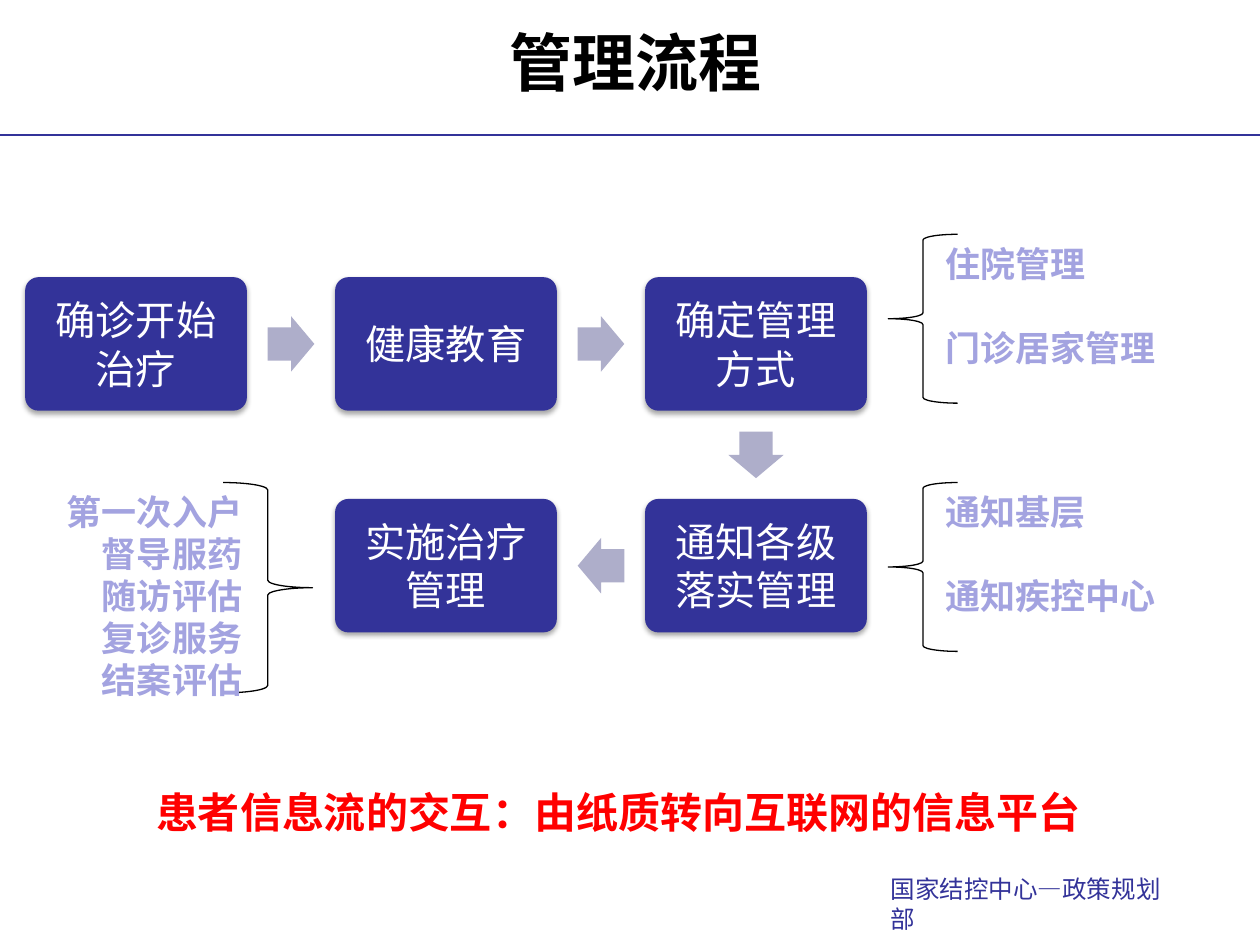
import pptx
import pptx.util
import pptx.dml.color
import pptx.enum.shapes
import pptx.enum.text
import pptx.oxml
import pptx.oxml.ns

Inches, Pt = pptx.util.Inches, pptx.util.Pt
RGB = pptx.dml.color.RGBColor.from_string
Kind = pptx.enum.shapes.MSO_SHAPE
Align = pptx.enum.text.PP_ALIGN
Anchor = pptx.enum.text.MSO_ANCHOR

theme = {
    "navy": "333399", "arrow": "AEAECA", "note": "A3A3E0",
    "black": "000000", "white": "FFFFFF", "red": "FF0000",
    "title": 36, "step": 23, "list": 20, "key": 24, "foot": 14,
    "latin": "Arial", "asian": "Noto Sans CJK SC",
}
NS = pptx.oxml.ns.nsdecls("a")


def write(shape, lines, size, color, align=Align.LEFT, anchor=Anchor.TOP,
          bold=False, wrap=True, gap=0, latin="latin"):
    frame = shape.text_frame
    frame.text = "\n".join(lines)
    frame.word_wrap = wrap
    frame.vertical_anchor = anchor
    for i, para in enumerate(frame.paragraphs):
        para.alignment = align
        para.space_before = Pt(gap if i else 0)
        for run in para.runs:
            run.font.size = Pt(theme[size])
            run.font.bold = bold
            run.font.color.rgb = RGB(theme[color])
            run.font.name = theme[latin]
            run.font._element.append(pptx.oxml.parse_xml(
                f'<a:ea {NS} typeface="{theme["asian"]}"/>'))


def draw(kind, x, y, w, h, fill, line=None):
    shape = slide.shapes.add_shape(kind, Inches(x), Inches(y), Inches(w), Inches(h))
    shape.shadow.inherit = False
    shape.fill.solid()
    shape.fill.fore_color.rgb = RGB(theme[fill])
    if line:
        shape.line.color.rgb = RGB(theme[line])
        shape.line.width = Pt(0.75)
    else:
        shape.line.fill.background()
    return shape


deck = pptx.Presentation()
deck.slide_width, deck.slide_height = Inches(10), Inches(7.5)
slide = deck.slides.add_slide(deck.slide_layouts[5])

# Rule under the title
rule = slide.shapes.add_connector(pptx.enum.shapes.MSO_CONNECTOR.STRAIGHT,
                                  0, Inches(1.07), deck.slide_width, Inches(1.07))
rule.line.color.rgb = RGB(theme["navy"])
rule.line.width = Pt(1)
rule._element.spPr.append(pptx.oxml.parse_xml(f"<a:effectLst {NS}/>"))

# Title
title = slide.shapes.title
title.left, title.top = Inches(0.54), Inches(-0.02)
title.width, title.height = Inches(9), Inches(1.02)
write(title, ["管理流程"], "title", "black", Align.CENTER, Anchor.MIDDLE, True)

# Grid of the flow
left, top = 0.2, 2.2
col, row = 2.46, 1.76
wide, high = 1.76, 1.06

# Steps: column, row, text
steps = [(0, 0, "确诊开始治疗"), (1, 0, "健康教育"), (2, 0, "确定管理方式"),
         (2, 1, "通知各级落实管理"), (1, 1, "实施治疗管理")]
for c, r, text in steps:
    box = draw(Kind.ROUNDED_RECTANGLE, left + c * col, top + r * row, wide, high, "navy")
    box.adjustments[0] = 0.1
    fx = box._element.spPr.find(pptx.oxml.ns.qn("a:effectLst"))
    fx.append(pptx.oxml.parse_xml(
        f'<a:outerShdw {NS} blurRad="{Pt(3.1)}" dist="{Pt(1.8)}" dir="5400000" '
        'rotWithShape="0"><a:srgbClr val="000000"><a:alpha val="35000"/>'
        '</a:srgbClr></a:outerShdw>'))
    frame = box.text_frame
    frame.margin_left = frame.margin_right = Inches(0.1)
    frame.margin_top = frame.margin_bottom = Inches(0.1)
    write(box, [text], "step", "white", Align.CENTER, Anchor.MIDDLE)

# Arrows halfway between steps: column, row, turn
long, thick = 0.37, 0.44
for c, r, turn in [(0.5, 0, 0), (1.5, 0, 0), (2, 0.5, 90), (1.5, 1, 180)]:
    arrow = draw(Kind.RIGHT_ARROW, left + c * col + (wide - long) / 2,
                 top + r * row + (high - thick) / 2, long, thick, "arrow")
    arrow.adjustments[0], arrow.adjustments[1] = 0.6, 0.5
    arrow.rotation = turn

# Braces with their lists
braces = [
    (Kind.LEFT_BRACE, 7.05, 1.86, 0.55, 1.34, Align.LEFT, 24,
     ["住院管理", "门诊居家管理"]),
    (Kind.LEFT_BRACE, 7.05, 3.83, 0.55, 1.34, Align.LEFT, 24,
     ["通知基层", "通知疾控中心"]),
    (Kind.RIGHT_BRACE, 1.77, 3.83, 0.71, 1.67, Align.RIGHT, 0,
     ["第一次入户", "督导服药", "随访评估", "复诊服务", "结案评估"]),
]
for kind, x, y, w, h, align, gap, lines in braces:
    brace = draw(kind, x, y, w, h, "white", "black")
    write(brace, lines, "list", "note", align, bold=True, wrap=False, gap=gap)

# Key message and footer
key = slide.shapes.add_textbox(Inches(1.14), Inches(6.19), Inches(8.66), Inches(0.5))
write(key, ["患者信息流的交互：由纸质转向互联网的信息平台"], "key", "red",
      bold=True, latin="asian")
foot = slide.shapes.add_textbox(Inches(6.97), Inches(6.89), Inches(2.5), Inches(0.33))
write(foot, ["国家结控中心—政策规划部"], "foot", "navy")

deck.save("out.pptx")
